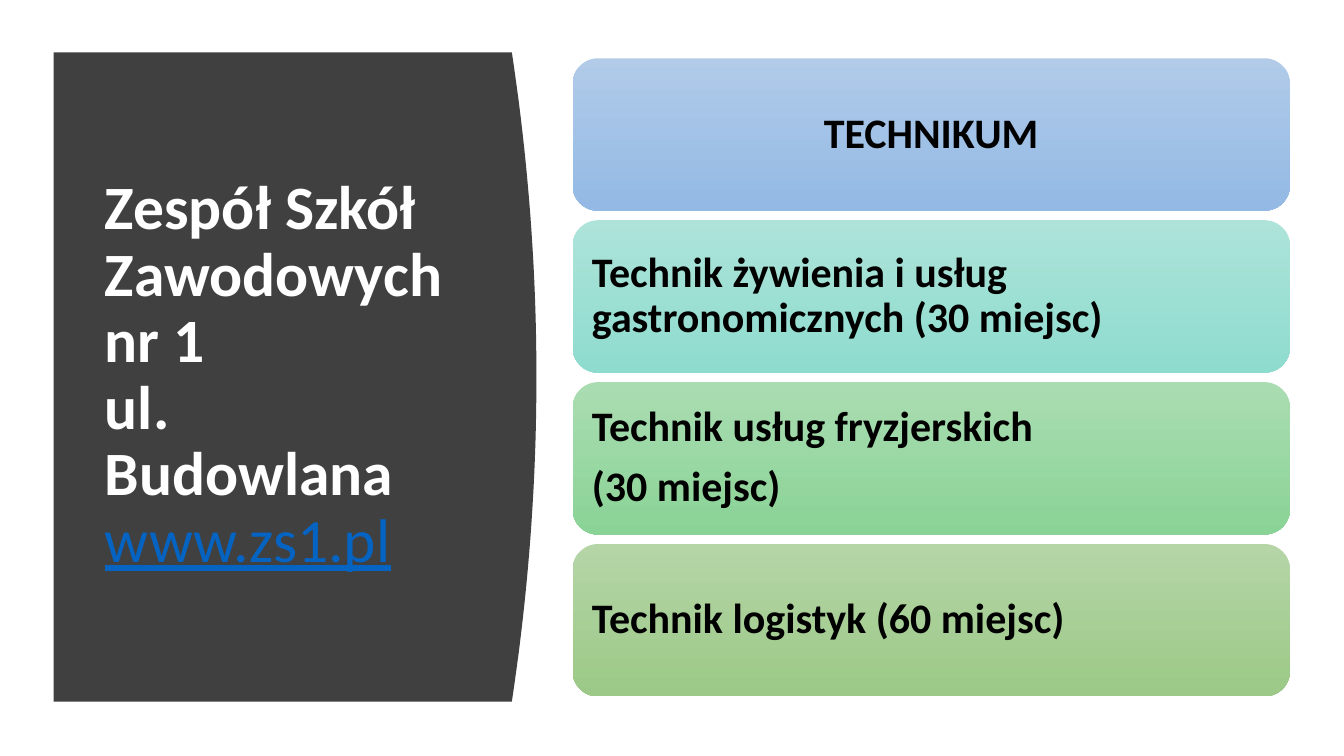
from pptx import Presentation
from pptx import util as u
from pptx.dml.color import RGBColor
from pptx.enum import shapes, text

# Content
SCHOOL_LINES = ["Zespół Szkół Zawodowych nr 1", "ul. Budowlana"]
WEBSITE = "www.zs1.pl"
CARDS = [  # paragraphs, alignment, gradient top, gradient bottom
    (["TECHNIKUM"], "CENTER", "B1CBE9", "93B9E4"),
    (["Technik żywienia i usług gastronomicznych (30 miejsc)"], "LEFT", "ADE3D9", "8EDCCE"),
    (["Technik usług fryzjerskich", "(30 miejsc)"], "LEFT", "AADCB2", "8AD396"),
    (["Technik logistyk (60 miejsc)"], "LEFT", "B5D5A7", "9CC987"),
]

# Layout in centimetres
PANEL = {"left": 1.35, "top": 1.32, "edge": 12.9, "bulge": 0.62, "height": 16.36}
TITLE = {"left": 2.39, "top": 2.82, "width": 9.5, "height": 13.31}
CARD = {"left": 14.43, "top": 1.47, "width": 18.08, "height": 3.84, "pitch": 4.08}
CURVE_STEPS = 40

# Text formats
TITLE_FONT = {"name": "Calibri", "size": u.Pt(44), "bold": True}
LINK_FONT = TITLE_FONT | {"bold": False, "underline": True}
CARD_FONT = {"name": "Calibri", "size": u.Pt(30), "bold": True}


def rgb(value):
    return RGBColor.from_string(value)


def apply(target, values):
    for name, value in values.items():
        setattr(target, name, value)


def add_span(para, words, font, color):
    span = para.add_run()
    span.text = words
    apply(span.font, font)
    span.font.color.rgb = rgb(color)


def add_panel(page):
    """Dark panel whose right side bows outwards as a parabola."""
    left, top, height = PANEL["left"], PANEL["top"], PANEL["height"]
    curve = []
    for step in range(CURVE_STEPS + 1):
        t = step / CURVE_STEPS
        x = PANEL["edge"] + PANEL["bulge"] * 4 * t * (1 - t)
        curve.append((u.Cm(x), u.Cm(top + height * t)))
    builder = page.shapes.build_freeform(u.Cm(left), u.Cm(top))
    builder.add_line_segments(curve + [(u.Cm(left), u.Cm(top + height))], close=True)
    panel = builder.convert_to_shape()
    panel.shadow.inherit = False
    panel.fill.solid()
    panel.fill.fore_color.rgb = rgb("404040")
    panel.line.fill.background()
    return panel


def fill_title(title):
    apply(title, {side: u.Cm(length) for side, length in TITLE.items()})
    apply(title.text_frame, {"word_wrap": True, "auto_size": text.MSO_AUTO_SIZE.NONE,
                             "vertical_anchor": text.MSO_ANCHOR.MIDDLE})
    para = title.text_frame.paragraphs[0]
    apply(para, {"alignment": text.PP_ALIGN.LEFT, "line_spacing": 0.9})
    for line in SCHOOL_LINES:
        add_span(para, line, TITLE_FONT, "FFFFFF")
        para.add_line_break()
    add_span(para, WEBSITE, LINK_FONT, "0563C1")


def add_card(page, row, lines, alignment, top_color, bottom_color):
    box = page.shapes.add_shape(
        shapes.MSO_SHAPE.ROUNDED_RECTANGLE,
        u.Cm(CARD["left"]), u.Cm(CARD["top"] + row * CARD["pitch"]),
        u.Cm(CARD["width"]), u.Cm(CARD["height"]))
    box.shadow.inherit = False
    box.line.fill.background()
    box.fill.gradient()
    box.fill.gradient_angle = 270
    for stop, color in zip(box.fill.gradient_stops, (top_color, bottom_color)):
        stop.color.rgb = rgb(color)

    frame = box.text_frame
    apply(frame, {"word_wrap": True, "vertical_anchor": text.MSO_ANCHOR.MIDDLE,
                  "margin_left": u.Cm(0.3), "margin_right": u.Cm(0.3)})
    for index, line in enumerate(lines):
        para = frame.add_paragraph() if index else frame.paragraphs[0]
        apply(para, {"alignment": text.PP_ALIGN[alignment], "line_spacing": 0.9,
                     "space_after": u.Pt(10.5)})
        add_span(para, line, CARD_FONT, "000000")


def main():
    deck = Presentation()
    deck.slide_width, deck.slide_height = u.Cm(33.87), u.Cm(19.05)
    page = deck.slides.add_slide(deck.slide_layouts.get_by_name("Title Only"))

    # Panel goes behind the title
    title = page.shapes.title
    title.element.addprevious(add_panel(page).element)
    fill_title(title)

    # Column of cards
    for row, card in enumerate(CARDS):
        add_card(page, row, *card)

    deck.save("out.pptx")


if __name__ == "__main__":
    main()
